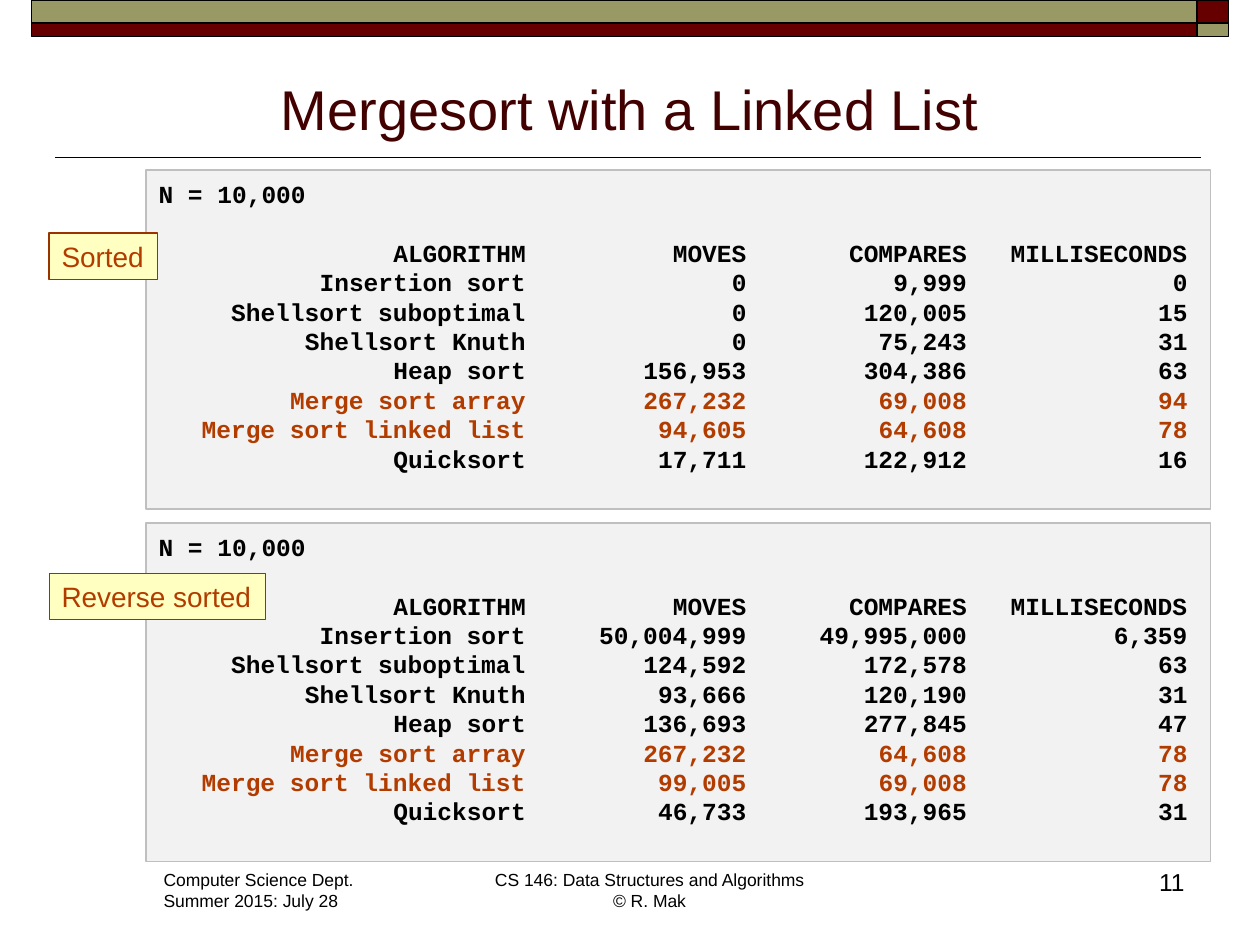
from lxml import etree
from pptx import Presentation
from pptx import util as u
from pptx.dml.color import RGBColor
from pptx.enum import shapes, text
from pptx.oxml import ns

THEME = {
    "black": "000000", "maroon": "660000", "olive": "999966",
    "title": "420000", "accent": "B23C00", "panel": "F2F2F2",
    "panel_line": "BFBFBF", "tag": "FFFFC2", "tag_line": "993300",
    "sans": "Arial", "mono": "Courier New",
    "title_size": 32, "tag_size": 16, "body_size": 14, "footer_size": 10,
}

TITLE = "Mergesort with a Linked List"
SIZE_NOTE = "N = 10,000"
HEADER = ("ALGORITHM", "MOVES", "COMPARES", "MILLISECONDS")
ALGORITHMS = (
    "Insertion sort", "Shellsort suboptimal", "Shellsort Knuth", "Heap sort",
    "Merge sort array", "Merge sort linked list", "Quicksort",
)
RESULTS = [
    {"order": "Sorted", "top": 1.35, "tag_top": 1.85, "tag_width": 0.86, "figures": [
        ("0", "9,999", "0"),
        ("0", "120,005", "15"),
        ("0", "75,243", "31"),
        ("156,953", "304,386", "63"),
        ("267,232", "69,008", "94"),
        ("94,605", "64,608", "78"),
        ("17,711", "122,912", "16"),
    ]},
    {"order": "Reverse sorted", "top": 4.15, "tag_top": 4.55, "tag_width": 1.72, "figures": [
        ("50,004,999", "49,995,000", "6,359"),
        ("124,592", "172,578", "63"),
        ("93,666", "120,190", "31"),
        ("136,693", "277,845", "47"),
        ("267,232", "64,608", "78"),
        ("99,005", "69,008", "78"),
        ("46,733", "193,965", "31"),
    ]},
]
LEFT, CENTER, RIGHT = text.PP_ALIGN.LEFT, text.PP_ALIGN.CENTER, text.PP_ALIGN.RIGHT
FOOTERS = [
    (("Computer Science Dept.", "Summer 2015: July 28"), (1.2, 6.85, 1.73, 0.44), LEFT, "footer_size"),
    (("CS 146: Data Structures and Algorithms\n© R. Mak",), (3.82, 6.85, 2.67, 0.44), CENTER, "footer_size"),
    (("11",), (7.42, 6.83, 2.08, 0.5), RIGHT, "body_size"),
]

CHAR_WIDTH = 0.6 * THEME["body_size"] / 72
COLUMN_ENDS = [25, 40, 55, 70]
LINE_PITCH = 1.2 * THEME["body_size"]


def color(key):
    return RGBColor.from_string(THEME[key])


def assign(target, values):
    for key, value in values.items():
        setattr(target, key, value)


def add_rect(slide, box, fill, line, width):
    rect = slide.shapes.add_shape(shapes.MSO_SHAPE.RECTANGLE, *map(u.Inches, box))
    rect.shadow.inherit = False
    rect.fill.solid()
    rect.fill.fore_color.rgb = color(fill)
    rect.line.color.rgb = color(line)
    rect.line.width = u.Pt(width)
    return rect


def write(frame, lines, size, ink="black", font="sans", align=LEFT,
          anchor=text.MSO_ANCHOR.TOP, wrap=True, bold=False):
    assign(frame, {"word_wrap": wrap, "vertical_anchor": anchor})
    for number, line in enumerate(lines):
        paragraph = frame.add_paragraph() if number else frame.paragraphs[0]
        paragraph.text = line
        paragraph.alignment = align
        for run in paragraph.runs:
            assign(run.font, {"name": THEME[font], "size": u.Pt(THEME[size]), "bold": bold})
            run.font.color.rgb = color(ink)


def add_label(slide, box, lines, size, **style):
    label = slide.shapes.add_textbox(*map(u.Inches, box))
    write(label.text_frame, lines, size, **style)


def set_right_tabs(paragraph):
    tabs = etree.SubElement(paragraph._p.get_or_add_pPr(), ns.qn("a:tabLst"))
    for end in COLUMN_ENDS:
        position = str(int(u.Inches(end * CHAR_WIDTH)))
        etree.SubElement(tabs, ns.qn("a:tab"), pos=position, algn="r")


def add_banner(slide):
    rule = slide.shapes.add_connector(
        shapes.MSO_CONNECTOR.STRAIGHT, *map(u.Inches, (9.53, 1.25, 0.44, 1.25)))
    rule.line.color.rgb = color("black")
    rule.line.width = u.Pt(1)
    etree.SubElement(rule._element.spPr, ns.qn("a:effectLst"))
    for top, height, wide, narrow in ((0, 0.18, "olive", "maroon"), (0.18, 0.11, "maroon", "olive")):
        add_rect(slide, (0.25, top, 9.25, height), wide, "black", 1)
        add_rect(slide, (9.5, top, 0.25, height), narrow, "black", 1)


def add_results(slide, result):
    panel = add_rect(slide, (1.16, result["top"], 8.45, 2.69), "panel", "panel_line", 0.75)
    rows = [HEADER] + [(name, *row) for name, row in zip(ALGORITHMS, result["figures"])]
    lines = [SIZE_NOTE] + ["\t" + "\t".join(row) for row in rows]
    frame = panel.text_frame
    frame.margin_top = u.Inches(0.07)
    write(frame, lines, "body_size", font="mono", bold=True)
    for paragraph in frame.paragraphs:
        paragraph.line_spacing = u.Pt(LINE_PITCH)
        set_right_tabs(paragraph)
        if "Merge" in paragraph.text:
            for run in paragraph.runs:
                run.font.color.rgb = color("accent")
    frame.paragraphs[1].space_before = u.Pt(LINE_PITCH)


def add_tag(slide, result):
    box = (0.39, result["tag_top"], result["tag_width"], 0.37)
    tag = add_rect(slide, box, "tag", "tag_line", 0.75)
    write(tag.text_frame, [result["order"]], "tag_size", ink="accent", wrap=False)


def main():
    deck = Presentation()
    assign(deck, {"slide_width": u.Inches(10), "slide_height": u.Inches(7.5)})
    slide = deck.slides.add_slide(deck.slide_layouts[6])
    add_banner(slide)
    for lines, box, align, size in FOOTERS:
        add_label(slide, box, lines, size, align=align, wrap=False if size == "footer_size" else True)
    add_label(slide, (0.5, 0.45, 9, 0.72), [TITLE], "title_size", ink="title",
              align=CENTER, anchor=text.MSO_ANCHOR.BOTTOM)
    for result in RESULTS:
        add_results(slide, result)
    for result in RESULTS:
        add_tag(slide, result)
    deck.save("out.pptx")


if __name__ == "__main__":
    main()
